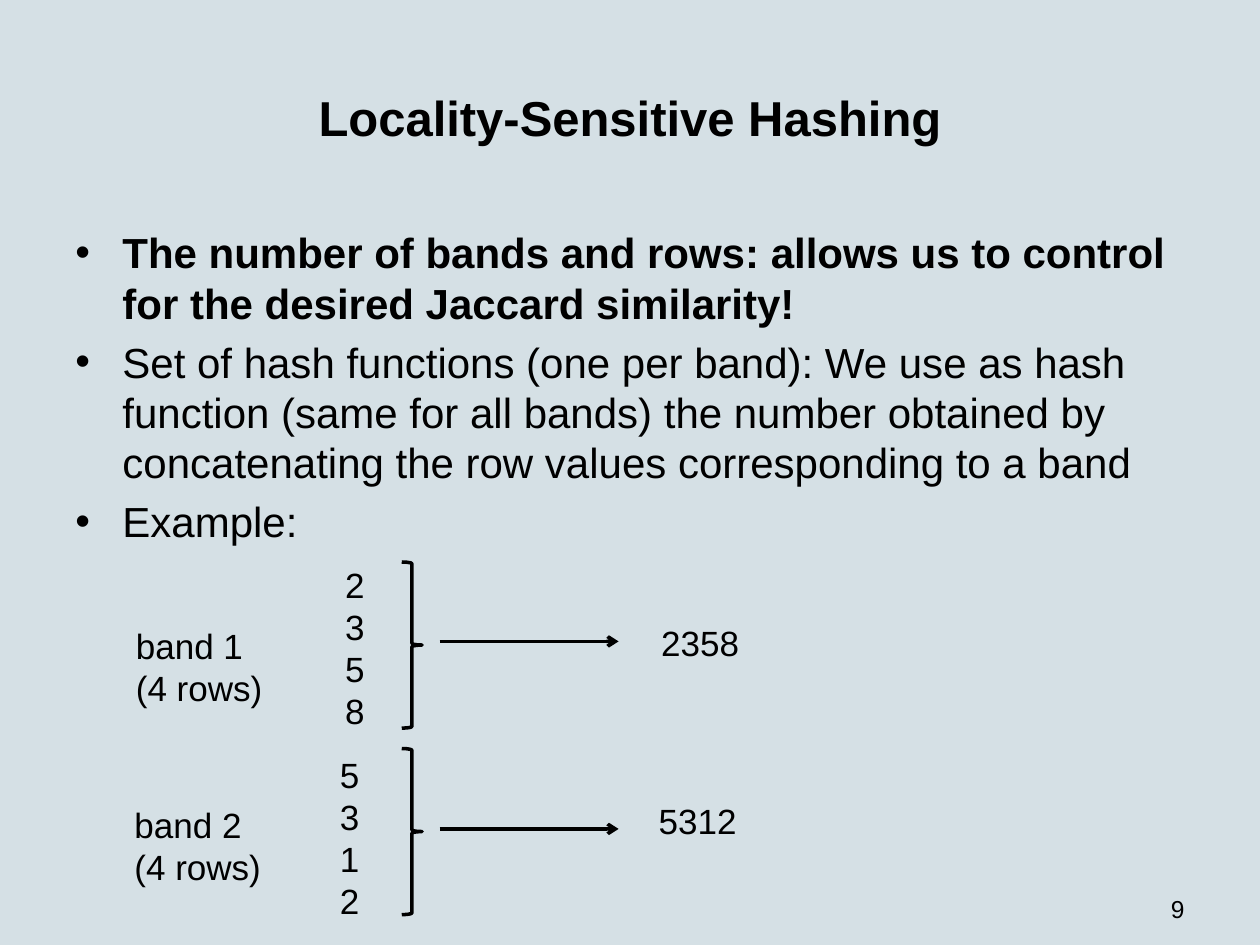
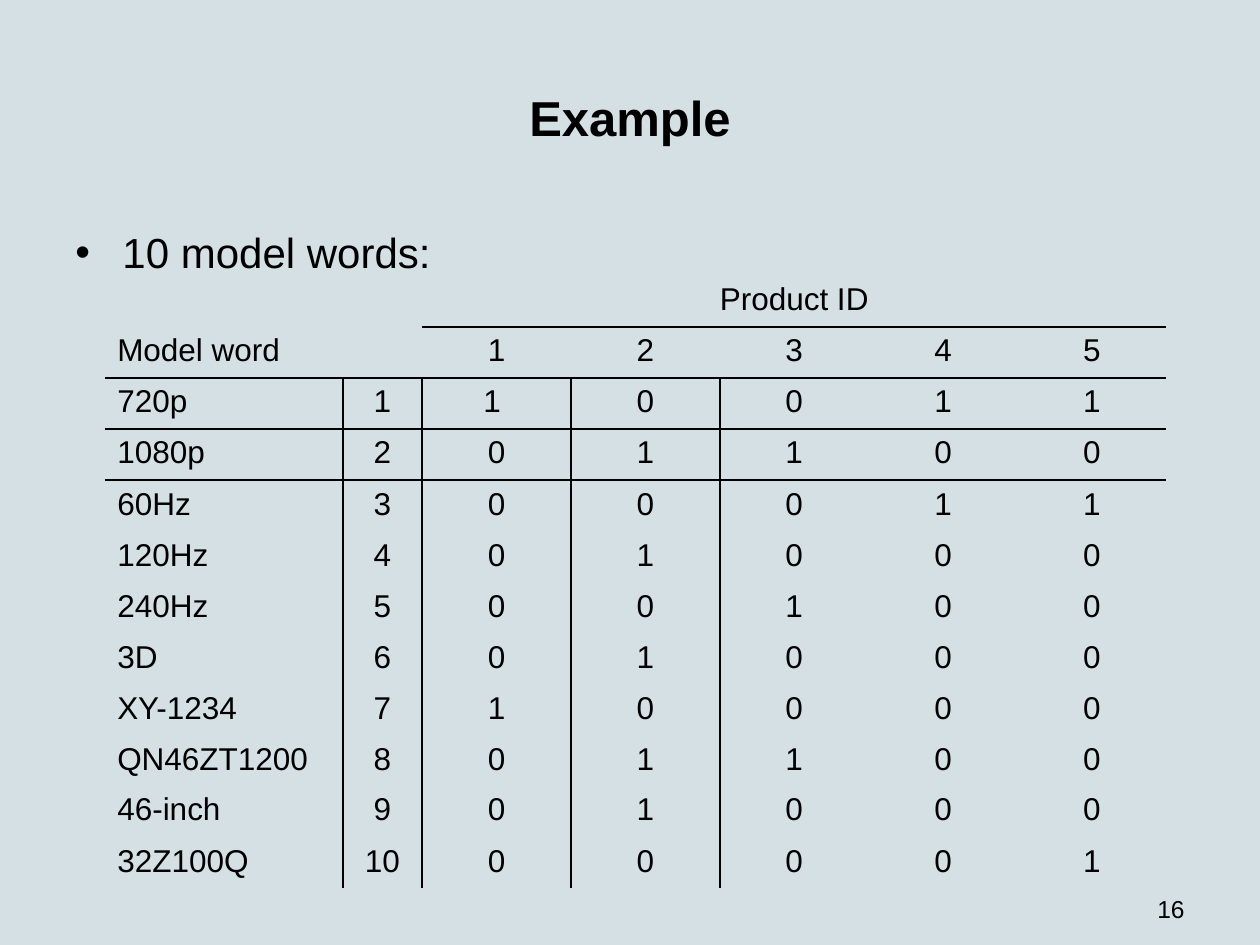
import dataclasses
import typing

import lxml.etree as etree
import pptx
import pptx.dml.color
import pptx.enum.shapes
import pptx.enum.text
import pptx.oxml.ns
import pptx.presentation
import pptx.slide
import pptx.util

Cm = pptx.util.Cm
Pt = pptx.util.Pt
RGB = pptx.dml.color.RGBColor
Align = pptx.enum.text.PP_ALIGN
Anchor = pptx.enum.text.MSO_ANCHOR
qn = pptx.oxml.ns.qn


@dataclasses.dataclass(frozen=True)
class Theme:
    font: str = "Arial"
    ink: RGB = RGB(0, 0, 0)
    ground: RGB = RGB(0xD5, 0xE0, 0xE5)
    title: int = 28
    body: int = 24
    label: int = 20
    cell: int = 18
    page: int = 14
    stroke: int = 2
    rule: int = 1


class Box(typing.NamedTuple):
    """Left, top, width and height in centimetres."""
    left: float
    top: float
    width: float
    height: float

    def lengths(self) -> list[Cm]:
        return [Cm(side) for side in self]


class Point(typing.NamedTuple):
    """A bullet point."""
    text: str
    bold: bool = False


class Band(typing.NamedTuple):
    """A band of signature rows, and the places of its parts."""
    name: str
    digits: str
    label: Box
    column: Box
    brace: Box
    arrow: float
    code: Box


class Word(typing.NamedTuple):
    """A model word and its row of product flags."""
    name: str
    flags: list[str]


THEME = Theme()
TITLE = Box(1.27, 0.76, 22.86, 3.18)
BODY = Box(1.27, 4.45, 22.86, 12.57)
PAGE = Box(18.21, 17.35, 5.92, 1.32)
ARROW = (8.86, 12.47)
INDENT = 0.95

POINTS = [
    Point("The number of bands and rows: allows us to control for the desired "
          "Jaccard similarity!", bold=True),
    Point("Set of hash functions (one per band): We use as hash function (same for "
          "all bands) the number obtained by concatenating the row values "
          "corresponding to a band"),
    Point("Example:"),
]
BANDS = [
    Band("band 1", "2358", Box(2.49, 12.47, 3.6, 1.96), Box(6.71, 11.23, 1.4, 3.68),
         Box(8.1, 11.33, 0.41, 3.35), 12.93, Box(13.08, 12.4, 3.2, 1.12)),
    Band("band 2", "5312", Box(2.46, 16.08, 3.66, 1.96), Box(6.6, 15.06, 1.4, 3.68),
         Box(8.1, 15.09, 0.41, 3.35), 16.71, Box(13.03, 16, 3.2, 1.12)),
]
WORDS = [
    Word("720p", ["1 ", *"0011"]),
    Word("1080p", list("01100")),
    Word("60Hz", list("00011")),
    Word("120Hz", list("01000")),
    Word("240Hz", list("00100")),
    Word("3D", list("01000")),
    Word("XY-1234", list("10000")),
    Word("QN46ZT1200", list("01100")),
    Word("46-inch", list("01000")),
    Word("32Z100Q", list("00001")),
]
GRID = Box(2.11, 5.56, 21.4, 12.22)
COLS = [4.8, 1.6] + [3.0] * 5
ROW, SHORT_ROW = 1.03, 0.89
SHORT = 9
PLAIN_STYLE = "{2D5ABB26-0587-4C30-8999-92F81FD0307C}"


def add_run(para: typing.Any, text: str, size: int, bold: bool = False) -> None:
    run = para.add_run()
    run.text = text
    run.font.name = THEME.font
    run.font.size = Pt(size)
    run.font.bold = bold
    run.font.color.rgb = THEME.ink


def add_text(slide: pptx.slide.Slide, box: Box, lines: list[Point], size: int,
             align: Align = Align.LEFT, anchor: Anchor = Anchor.TOP) -> typing.Any:
    frame = slide.shapes.add_textbox(*box.lengths()).text_frame
    frame.word_wrap = True
    frame.vertical_anchor = anchor
    for i, line in enumerate(lines):
        para = frame.add_paragraph() if i else frame.paragraphs[0]
        para.alignment = align
        add_run(para, line.text, size, line.bold)
    return frame


def add_points(slide: pptx.slide.Slide, points: list[Point]) -> None:
    frame = add_text(slide, BODY, points, THEME.body)
    for para in frame.paragraphs:
        para.space_before = para.space_after = Pt(THEME.body / 10)
        props = para._p.get_or_add_pPr()
        props.set("marL", str(Cm(INDENT)))
        props.set("indent", str(-Cm(INDENT)))
        etree.SubElement(props, qn("a:buFont"), typeface=THEME.font)
        etree.SubElement(props, qn("a:buChar"), char="•")


def add_slide(deck: pptx.presentation.Presentation, title: str, points: list[Point],
              page: int) -> pptx.slide.Slide:
    """Add a slide with the ground, title, bullets and page number."""
    slide = deck.slides.add_slide(deck.slide_layouts[6])
    fill = slide.background.fill
    fill.solid()
    fill.fore_color.rgb = THEME.ground
    add_text(slide, TITLE, [Point(title, bold=True)], THEME.title,
             Align.CENTER, Anchor.MIDDLE)
    add_points(slide, points)
    foot = add_text(slide, PAGE, [Point(str(page))], THEME.page,
                    Align.RIGHT, Anchor.BOTTOM)
    foot.margin_bottom = Cm(0.05)
    return slide


def ink_line(line: typing.Any) -> None:
    line.color.rgb = THEME.ink
    line.width = Pt(THEME.stroke)


def add_brace(slide: pptx.slide.Slide, box: Box) -> None:
    kind = pptx.enum.shapes.MSO_SHAPE.RIGHT_BRACE
    brace = slide.shapes.add_shape(kind, *box.lengths())
    brace.shadow.inherit = False
    brace.fill.background()
    ink_line(brace.line)


def add_arrow(slide: pptx.slide.Slide, top: float) -> None:
    start, end = ARROW
    kind = pptx.enum.shapes.MSO_CONNECTOR.STRAIGHT
    arrow = slide.shapes.add_connector(kind, Cm(start), Cm(top), Cm(end), Cm(top))
    ink_line(arrow.line)
    etree.SubElement(arrow.line._get_or_add_ln(), qn("a:tailEnd"), type="arrow")
    etree.SubElement(arrow._element.spPr, qn("a:effectLst"))


def add_band(slide: pptx.slide.Slide, band: Band) -> None:
    digits = [Point(digit) for digit in band.digits]
    label = [Point(band.name), Point(f"({len(digits)} rows)")]
    add_text(slide, band.label, label, THEME.label)
    add_text(slide, band.column, digits, THEME.label)
    add_brace(slide, band.brace)
    add_arrow(slide, band.arrow)
    add_text(slide, band.code, [Point(band.digits)], THEME.label)


def has_below(row: int, col: int) -> bool:
    return row in (1, 2) or (row == 0 and col >= 2)


def has_right(row: int, col: int) -> bool:
    return row >= 2 and 0 <= col <= 2


def add_rules(cell: typing.Any, row: int, col: int) -> None:
    """Draw the borders of a cell, in the order the file format asks for."""
    edges = {
        "a:lnL": has_right(row, col - 1),
        "a:lnR": has_right(row, col),
        "a:lnT": has_below(row - 1, col),
        "a:lnB": has_below(row, col),
    }
    props = cell._tc.get_or_add_tcPr()
    for tag, shown in edges.items():
        if shown:
            line = etree.SubElement(props, qn(tag), w=str(Pt(THEME.rule)))
            fill = etree.SubElement(line, qn("a:solidFill"))
            etree.SubElement(fill, qn("a:srgbClr"), val=str(THEME.ink))


def add_grid(slide: pptx.slide.Slide, words: list[Word]) -> None:
    rows = [["", "", "", "Product ID", "", "", ""],
            ["Model word", "", *"12345"]]
    rows += [[word.name, str(i), *word.flags] for i, word in enumerate(words, 1)]
    frame = slide.shapes.add_table(len(rows), len(COLS), *GRID.lengths())
    table = frame.table
    table.first_row = table.horz_banding = False
    table._tbl.tblPr.find(qn("a:tableStyleId")).text = PLAIN_STYLE
    for col, width in enumerate(COLS):
        table.columns[col].width = Cm(width)
    for row, texts in enumerate(rows):
        table.rows[row].height = Cm(SHORT_ROW if row == SHORT else ROW)
        for col, text in enumerate(texts):
            cell = table.cell(row, col)
            add_rules(cell, row, col)
            cell.fill.background()
            para = cell.text_frame.paragraphs[0]
            para.alignment = Align.CENTER if col else Align.LEFT
            para.font.size = Pt(THEME.cell)
            if text:
                add_run(para, text, THEME.cell)
    for row, first, last in [(0, 0, 1), (0, 3, 5), (1, 0, 1)]:
        table.cell(row, first).merge(table.cell(row, last))


def main() -> None:
    deck = pptx.Presentation()
    deck.slide_width, deck.slide_height = Cm(25.4), Cm(19.05)
    hashing = add_slide(deck, "Locality-Sensitive Hashing", POINTS, 9)
    for band in BANDS:
        add_band(hashing, band)
    sample = add_slide(deck, "Example", [Point("10 model words:")], 16)
    add_grid(sample, WORDS)
    deck.save("out.pptx")


if __name__ == "__main__":
    main()
